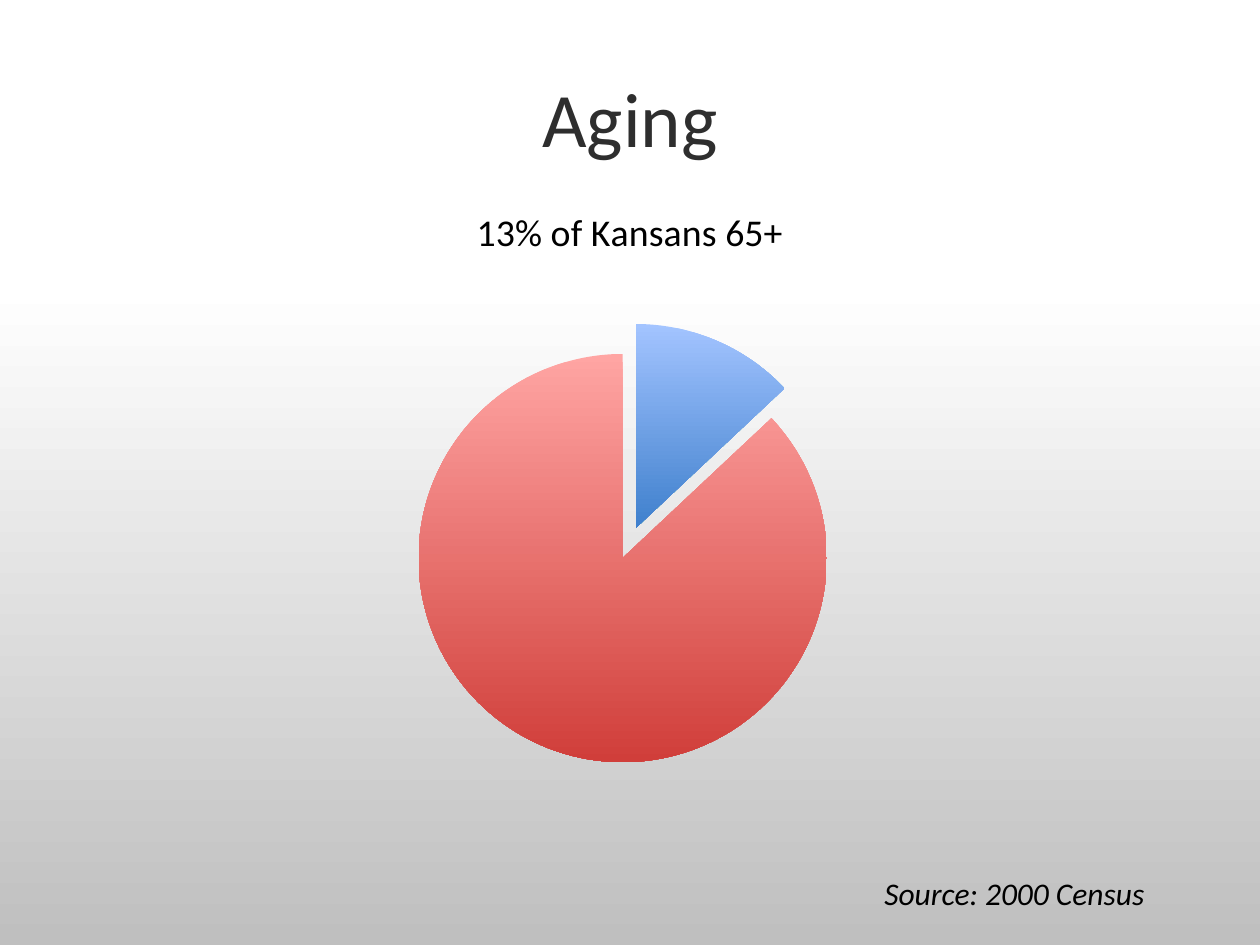
from lxml import etree
from pptx import Presentation
from pptx import util as u
from pptx.chart import data
from pptx.dml.color import RGBColor
from pptx.enum import chart as charts, text
from pptx.oxml.ns import qn

COLOURS = {
    "title": "2E2E2E", "text": "000000",
    "page_top": "FFFFFF", "page_bottom": "BFBFBF",
    "older_top": "A3C4FF", "older_bottom": "3F80CD",
    "younger_top": "FFA5A3", "younger_bottom": "D03E3A",
}


def colour(name):
    return RGBColor.from_string(COLOURS[name])


def format_font(font, size=18, tint="text", bold=False, italic=False):
    font.name = "Calibri"
    font.size = u.Pt(size)
    font.bold, font.italic = bold, italic
    font.color.rgb = colour(tint)


def write(frame, words, align=text.PP_ALIGN.LEFT, **style):
    para = frame.paragraphs[0]
    para.alignment = align
    span = para.add_run()
    span.text = words
    format_font(span.font, **style)


def shade(fill, name, start=0):
    """Fill from top to bottom with the two shades of a name."""
    fill.gradient()
    fill.gradient_angle = 270
    for stop, end, place in zip(fill.gradient_stops, ("top", "bottom"), (start, 1)):
        stop.color.rgb = colour(f"{name}_{end}")
        stop.position = place


def explosion(percent):
    element = etree.Element(qn("c:explosion"))
    element.set("val", str(percent))
    return element


class SlideBuilder:
    def __init__(self, deck):
        self.page = deck.slides.add_slide(deck.slide_layouts[5])
        shade(self.page.background.fill, "page", start=0.3)

    def title(self, words, *place):
        box = self.page.shapes.title
        box.left, box.top, box.width, box.height = map(u.Inches, place)
        box.text_frame.vertical_anchor = text.MSO_ANCHOR.MIDDLE
        write(box.text_frame, words, text.PP_ALIGN.CENTER, size=44, tint="title")

    def label(self, words, *place, **style):
        box = self.page.shapes.add_textbox(*map(u.Inches, place))
        box.text_frame.word_wrap = False
        box.text_frame.auto_size = text.MSO_AUTO_SIZE.SHAPE_TO_FIT_TEXT
        write(box.text_frame, words, **style)

    def pie(self, heading, slices, *place):
        """Each slice is (category, value, shade name, explosion)."""
        table = data.CategoryChartData()
        table.categories = [item[0] for item in slices]
        table.add_series("Series 1", [item[1] for item in slices])
        chart = self.page.shapes.add_chart(
            charts.XL_CHART_TYPE.PIE, *map(u.Inches, place), table).chart
        chart.has_legend = False
        format_font(chart.font)
        chart.has_title = True
        write(chart.chart_title.text_frame, heading, text.PP_ALIGN.CENTER, size=21.6)

        # Slice colours and offsets
        series = chart.plots[0].series[0]
        for index, (_, _, name, offset) in enumerate(slices):
            look = series.points[index].format
            shade(look.fill, name)
            look.line.fill.background()
            point = series._element.findall(qn("c:dPt"))[index]
            point.find(qn("c:spPr")).addprevious(explosion(offset))
        series._element.find(qn("c:dPt")).addprevious(explosion(25))

        # Plot area as fractions of the chart
        area = chart._chartSpace.chart.plotArea
        for old in area.findall(qn("c:layout")):
            area.remove(old)
        layout = etree.Element(qn("c:layout"))
        manual = etree.SubElement(layout, qn("c:manualLayout"))
        for tag, value in (("layoutTarget", "inner"), ("xMode", "edge"), ("yMode", "edge"),
                           ("x", 0.28), ("y", 0.15), ("w", 0.45), ("h", 0.82)):
            etree.SubElement(manual, qn(f"c:{tag}")).set("val", str(value))
        area.insert(0, layout)


def main():
    deck = Presentation()
    deck.slide_width, deck.slide_height = u.Inches(10), u.Inches(7.5)
    slide = SlideBuilder(deck)
    slide.title("Aging", 0.5, 0.3, 9, 1.25)
    slide.pie("13% of Kansans 65+",
              [("1", 13, "older", 0), ("", 87, "younger", 16)],
              0.5, 1.42, 9, 4.95)
    slide.label("Source: 2000 Census", 6.92, 6.89, 2.92, 0.4, italic=True)
    deck.save("out.pptx")


if __name__ == "__main__":
    main()
